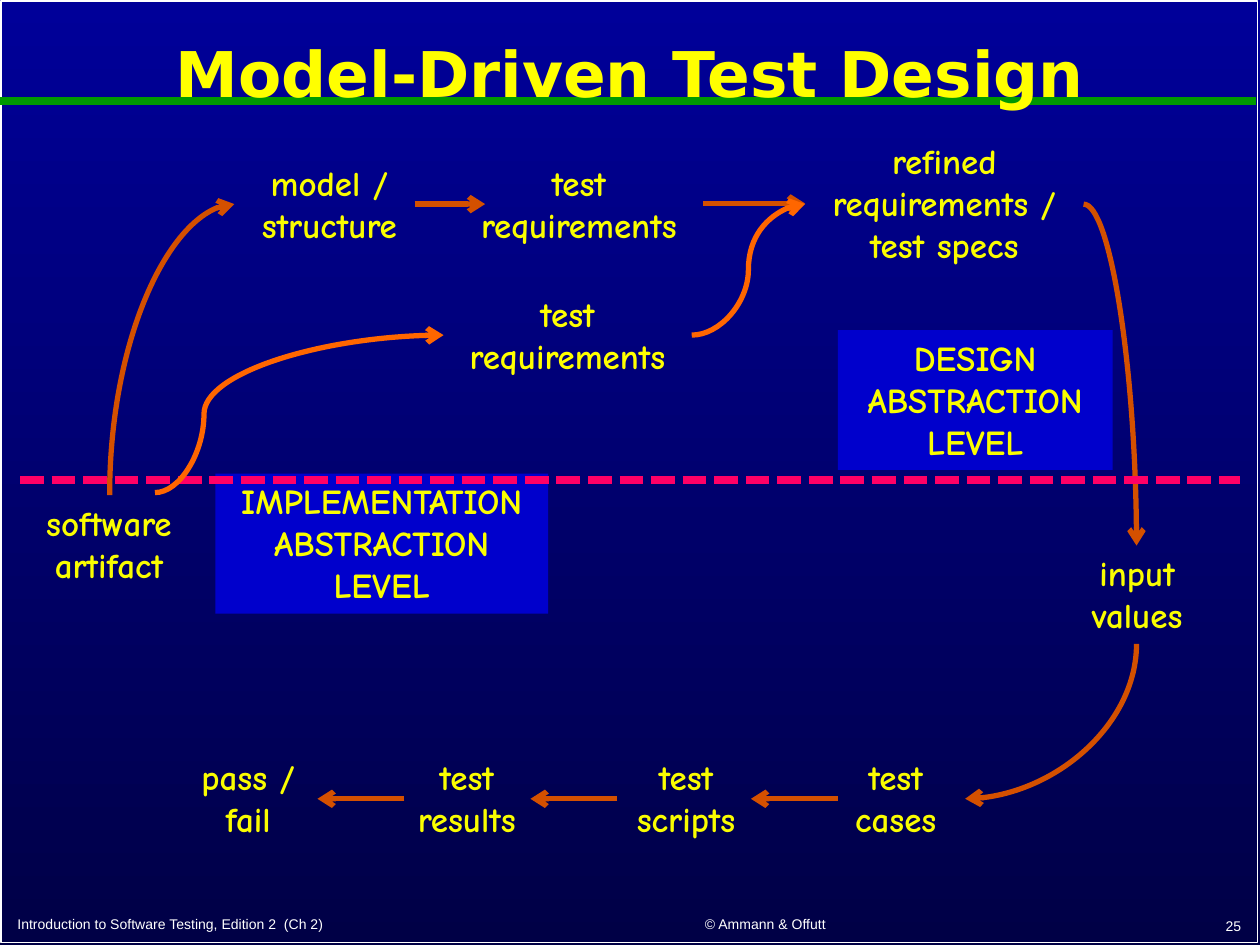
from dataclasses import dataclass

from lxml.etree import SubElement
from pptx import Presentation
from pptx.dml.color import RGBColor
from pptx.enum.dml import MSO_LINE
from pptx.enum.shapes import MSO_CONNECTOR as Connector, MSO_SHAPE
from pptx.enum.text import MSO_ANCHOR as Anchor, MSO_AUTO_SIZE as AutoSize, PP_ALIGN as Align
from pptx.oxml.ns import qn
from pptx.util import Inches, Pt


@dataclass(frozen=True)
class Theme:
    """Colours, fonts and sizes of the slide."""
    top: str = "000099"
    bottom: str = "000046"
    white: str = "FFFFFF"
    rule: str = "009900"
    title: str = "FFFF00"
    label: str = "FAFD00"
    panel: str = "0000CC"
    flow: str = "D45000"
    bypass: str = "FF6600"
    divider: str = "FF0066"
    title_font: str = "DejaVu Sans"
    label_font: str = "Comic Neue"
    footer_font: str = "Arial"
    title_size: int = 36
    label_size: int = 20
    footer_size: int = 8
    thin: int = 1
    arrow: int = 3
    thick: float = 4.5


THEME = Theme()
TOP_Y, BYPASS_Y, BOTTOM_Y = 1.62, 2.66, 6.34
LABELS = {
    "artifact": ("software artifact", 0.11, 3.93, 1.51, 0.77),
    "model": ("model / structure", 1.86, 1.23, 1.51, 0.77),
    "requirements": ("test requirements", 3.61, 1.23, 1.97, 0.77),
    "specs": ("refined requirements / test specs", 6.39, 1.06, 2.21, 1.11),
    "values": ("input values", 8.27, 4.33, 1.51, 0.77),
    "cases": ("test cases", 6.56, 5.95, 1.1, 0.77),
    "scripts": ("test scripts", 4.82, 5.95, 1.25, 0.77),
    "results": ("test results", 3.08, 5.95, 1.25, 0.77),
    "verdict": ("pass / fail", 1.35, 5.95, 1.24, 0.77),
}
PANELS = [
    ("IMPLEMENTATION\nABSTRACTION\nLEVEL", 1.71, 3.76, 2.64, 1.11),
    ("DESIGN\nABSTRACTION\nLEVEL", 6.65, 2.62, 2.18, 1.11),
]
FOOTERS = [
    ("Introduction to Software Testing, Edition 2  (Ch 2)", 0.04, 7.18, 4.2, 0.27, Align.LEFT),
    ("© Ammann & Offutt", 4.49, 7.17, 3.17, 0.28, Align.CENTER),
    ("25", 7.87, 7.17, 2.08, 0.29, Align.RIGHT),
]


def rgb(color):
    """Turn a hex string into a colour."""
    return RGBColor.from_string(color)


def style_text(frame, font, size, color, align=Align.CENTER, bold=False):
    """Give every paragraph of a frame one style."""
    for paragraph in frame.paragraphs:
        paragraph.alignment = align
        paragraph.font.name = font
        paragraph.font.size = Pt(size)
        paragraph.font.bold = bold
        paragraph.font.color.rgb = rgb(color)


def paint_background(slide):
    """Fill the slide with a gradient that darkens downwards."""
    fill = slide.background.fill
    fill.gradient()
    fill.gradient_angle = 270
    for stop, color, position in zip(fill.gradient_stops, (THEME.top, THEME.bottom), (0, 1)):
        stop.color.rgb = rgb(color)
        stop.position = position


def add_frame(slide):
    """Draw the white border around the slide."""
    frame = slide.shapes.add_shape(
        MSO_SHAPE.RECTANGLE, *map(Inches, (0.01, 0.01, 9.97, 7.47)))
    frame.shadow.inherit = False
    frame.fill.background()
    frame.line.color.rgb = rgb(THEME.white)
    frame.line.width = Pt(THEME.thin)


def add_title(slide, text):
    """Place the title in front of the rule."""
    title = slide.shapes.title
    title.left, title.top, title.width, title.height = map(Inches, (0.05, 0.11, 9.9, 1))
    frame = title.text_frame
    frame.text = text
    frame.auto_size = AutoSize.NONE
    frame.vertical_anchor = Anchor.MIDDLE
    frame.paragraphs[0].line_spacing = 0.9
    style_text(frame, THEME.title_font, THEME.title_size, THEME.title, bold=True)
    title._element.getparent().append(title._element)


def add_footer(slide, text, left, top, width, height, align):
    """Add one small text at the foot of the slide."""
    box = slide.shapes.add_textbox(*map(Inches, (left, top, width, height)))
    frame = box.text_frame
    frame.text = text
    frame.word_wrap = False
    frame.vertical_anchor = Anchor.BOTTOM
    style_text(frame, THEME.footer_font, THEME.footer_size, THEME.white, align)


def add_label(slide, text, left, top, width, height, color=THEME.label, panel=None):
    """Add a centred label, on a coloured panel if one is given."""
    box = slide.shapes.add_textbox(*map(Inches, (left, top, width, height)))
    frame = box.text_frame
    frame.text = text
    frame.word_wrap = panel is None
    frame.auto_size = AutoSize.SHAPE_TO_FIT_TEXT
    style_text(frame, THEME.label_font, THEME.label_size, color, bold=True)
    if panel:
        box.fill.solid()
        box.fill.fore_color.rgb = rgb(panel)
    return box


def add_line(slide, start, end, color, width, kind=Connector.STRAIGHT):
    """Draw a connector without shadow."""
    line = slide.shapes.add_connector(kind, *map(Inches, (*start, *end)))
    line.line.color.rgb = rgb(color)
    line.line.width = Pt(width)
    SubElement(line._element.spPr, qn("a:effectLst"))
    return line


def add_arrow(slide, start, end, color=THEME.flow, kind=Connector.STRAIGHT):
    """Draw a connector with an open arrowhead at its end."""
    arrow = add_line(slide, start, end, color, THEME.arrow, kind)
    SubElement(arrow.line._get_or_add_ln(), qn("a:tailEnd"), type="arrow")
    return arrow


def add_s_curve(slide, start, end, bend):
    """Draw an S-shaped arrow that turns at a share of its width."""
    arrow = add_arrow(slide, start, end, THEME.bypass, Connector.CURVE)
    values = arrow._element.spPr.find(qn("a:prstGeom")).find(qn("a:avLst"))
    SubElement(values, qn("a:gd"), name="adj1", fmla=f"val {round(bend * 100000)}")


def add_quarter_curve(slide, start, end, upright=True):
    """Draw a quarter-turn arrow that leaves upright or level."""
    if upright:
        (x1, y1), (x2, y2) = start, end
        middle_x, middle_y = (x1 + x2) / 2, (y1 + y2) / 2
        half_x, half_y = (x2 - x1) / 2, (y2 - y1) / 2
        start = middle_x - half_y, middle_y + half_x
        end = middle_x + half_y, middle_y - half_x
    arrow = add_arrow(slide, start, end, kind=Connector.CURVE)
    properties = arrow._element.spPr
    properties.find(qn("a:prstGeom")).set("prst", "curvedConnector2")
    if upright:
        properties.find(qn("a:xfrm")).set("rot", str(90 * 60000))


def main():
    """Build the slide and save it."""
    presentation = Presentation()
    presentation.slide_width, presentation.slide_height = Inches(10), Inches(7.5)
    slide = presentation.slides.add_slide(presentation.slide_layouts[5])
    paint_background(slide)
    add_frame(slide)
    add_line(slide, (0, 0.8), (9.97, 0.8), THEME.rule, THEME.thick)
    add_title(slide, "Model-Driven Test Design")
    for footer in FOOTERS:
        add_footer(slide, *footer)
    boxes = {name: add_label(slide, *label) for name, label in LABELS.items()}
    add_quarter_curve(slide, (0.87, 3.93), (1.86, TOP_Y))
    add_quarter_curve(slide, (9.02, 5.11), (7.66, BOTTOM_Y))
    add_arrow(slide, (3.29, TOP_Y), (3.85, TOP_Y))
    refine = add_arrow(slide, (5.58, TOP_Y), (6.39, TOP_Y))
    refine.begin_connect(boxes["requirements"], 3)
    refine.end_connect(boxes["specs"], 1)
    for right in (3.21, 4.9, 6.65):
        add_arrow(slide, (right, BOTTOM_Y), (right - 0.69, BOTTOM_Y))
    for panel in PANELS:
        add_label(slide, *panel, panel=THEME.panel)
    add_quarter_curve(slide, (8.6, TOP_Y), (9.02, 4.33), upright=False)
    divider = add_line(slide, (0.16, 3.81), (9.84, 3.81), THEME.divider, THEME.thick)
    divider.line.dash_style = MSO_LINE.SQUARE_DOT
    add_s_curve(slide, (1.23, 3.91), (3.52, BYPASS_Y), 0.17)
    add_label(slide, "test requirements", 3.52, 2.27, 1.97, 0.77, THEME.title)
    add_s_curve(slide, (5.49, BYPASS_Y), (6.39, TOP_Y), 0.5)
    presentation.save("out.pptx")


if __name__ == "__main__":
    main()
